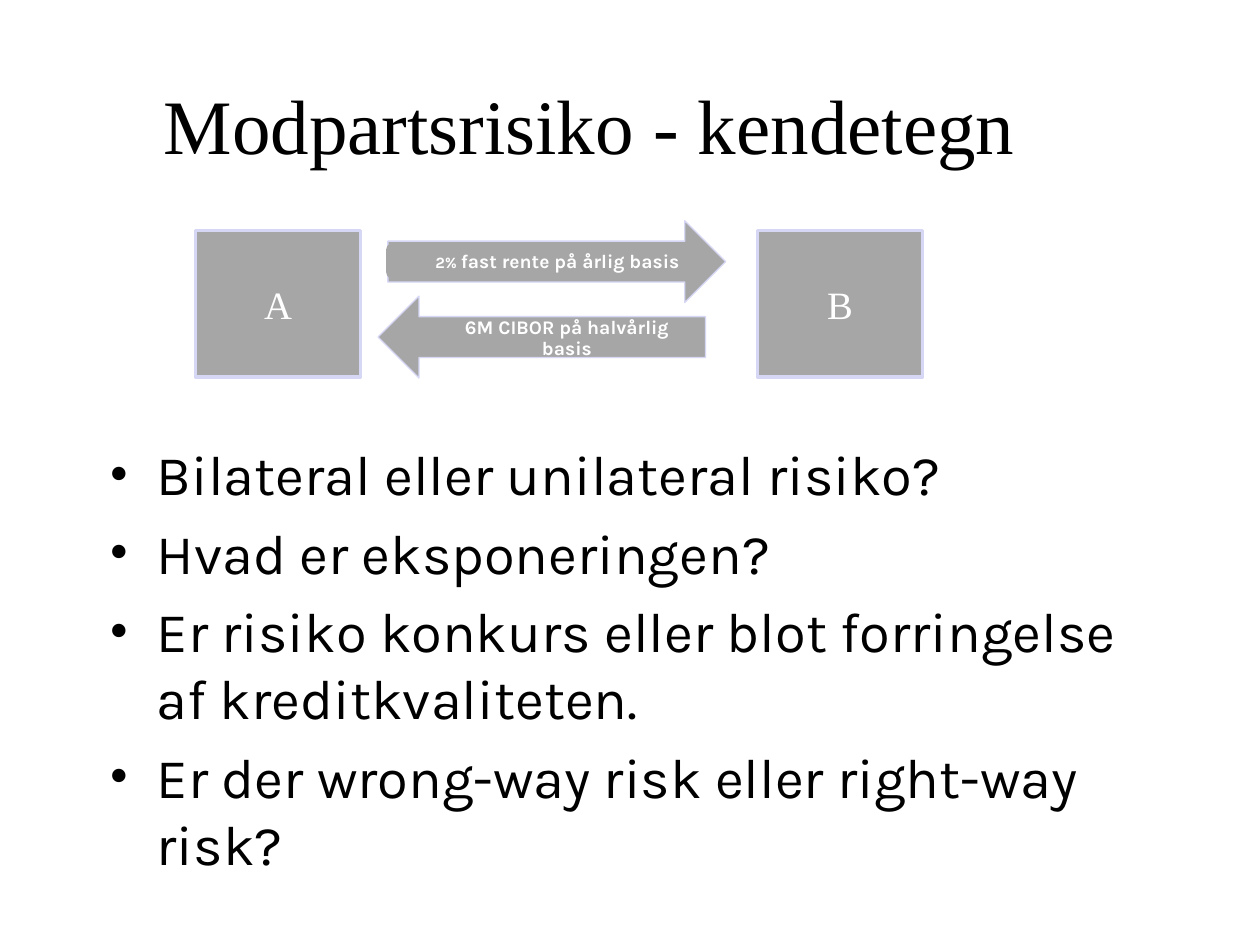
"""Build a slide on counterparty risk: a swap diagram above four bullet points."""
from dataclasses import dataclass

from lxml import etree
from pptx import Presentation
from pptx.dml.color import RGBColor
from pptx.enum import shapes, text
from pptx.oxml import ns
from pptx.util import Cm, Pt

BLACK = RGBColor(0x00, 0x00, 0x00)
WHITE = RGBColor(0xFF, 0xFF, 0xFF)
GREY = RGBColor(0xA6, 0xA6, 0xA6)
LAVENDER = RGBColor(0xD6, 0xD6, 0xF5)
SERIF = "Times New Roman"
SANS = "Karla"
BULLETS = [
    "Bilateral eller unilateral risiko?",
    "Hvad er eksponeringen?",
    "Er risiko konkurs eller blot forringelse af kreditkvaliteten.",
    "Er der wrong-way risk eller right-way risk?",
]


@dataclass
class Box:
    left: float
    top: float
    width: float
    height: float

    def emu(self) -> tuple:
        return Cm(self.left), Cm(self.top), Cm(self.width), Cm(self.height)


@dataclass
class Party:
    name: str
    left: float


@dataclass
class Payment:
    runs: list[tuple[str, float]]
    arrow: Box
    bar: Box
    label: Box
    inset: float
    rotation: int = 0


PARTIES = [Party("A", 3.94), Party("B", 15.27)]
PAYMENTS = [
    Payment([("2% ", 9), ("fast rente på årlig basis", 11)],
            Box(7.82, 4.45, 6.81, 1.65), Box(7.82, 4.93, 6.07, 0.66),
            Box(8.64, 4.98, 5.2, 0.61), 0.1),
    Payment([("6M CIBOR på halvårlig basis", 11)],
            Box(7.62, 5.97, 6.6, 1.65), Box(8.2, 6.48, 5.94, 0.66),
            Box(8.89, 6.53, 5.08, 0.61), 0.13, 180),
]


def style_run(r, font: str, size: float, color: RGBColor, bold: bool = False) -> None:
    r.font.name = font
    r.font.size = Pt(size)
    r.font.bold = bold
    r.font.color.rgb = color


def add_filled(s, kind, box: Box, line: RGBColor, weight: float):
    sp = s.shapes.add_shape(kind, *box.emu())
    sp.shadow.inherit = False
    sp.fill.solid()
    sp.fill.fore_color.rgb = GREY
    sp.line.color.rgb = line
    sp.line.width = Pt(weight)
    return sp


def add_title(s, title: str) -> None:
    sp = s.shapes.title
    sp.left, sp.top, sp.width, sp.height = Box(1.09, 0.91, 21.59, 3.18).emu()
    tf = sp.text_frame
    tf.text = title
    tf.auto_size = text.MSO_AUTO_SIZE.NONE
    tf.vertical_anchor = text.MSO_ANCHOR.MIDDLE
    p = tf.paragraphs[0]
    p.alignment = text.PP_ALIGN.CENTER
    style_run(p.runs[0], SERIF, 44, BLACK)


def add_party(s, party: Party) -> None:
    box = Box(party.left, 4.65, 3.33, 2.95)
    sp = add_filled(s, shapes.MSO_SHAPE.RECTANGLE, box, LAVENDER, 2)
    tf = sp.text_frame
    tf.text = party.name
    tf.vertical_anchor = text.MSO_ANCHOR.MIDDLE
    p = tf.paragraphs[0]
    p.alignment = text.PP_ALIGN.CENTER
    style_run(p.runs[0], SERIF, 22.1, WHITE)


def add_payment(s, payment: Payment) -> None:
    arrow = add_filled(s, shapes.MSO_SHAPE.RIGHT_ARROW, payment.arrow, LAVENDER, 0.75)
    arrow.rotation = payment.rotation
    add_filled(s, shapes.MSO_SHAPE.ROUNDED_RECTANGLE, payment.bar, GREY, 2)
    tf = s.shapes.add_textbox(*payment.label.emu()).text_frame
    tf.word_wrap = True
    tf.vertical_anchor = text.MSO_ANCHOR.MIDDLE
    tf.margin_left = tf.margin_right = Cm(payment.inset)
    tf.margin_top = tf.margin_bottom = Cm(payment.inset)
    p = tf.paragraphs[0]
    p.alignment = text.PP_ALIGN.CENTER
    p.line_spacing = 0.9
    for words, size in payment.runs:
        r = p.add_run()
        r.text = words
        style_run(r, SANS, size, WHITE, bold=True)


def add_bullets(s, items: list[str]) -> None:
    tf = s.shapes.add_textbox(*Box(1.96, 8.74, 21.59, 11.43).emu()).text_frame
    tf.word_wrap = True
    tf.text = "\n".join(items)
    for p in tf.paragraphs:
        p.space_before = Pt(6.4)
        style_run(p.runs[0], SANS, 32, BLACK)
        props = p._p.get_or_add_pPr()
        props.set("marL", str(Cm(0.95)))
        props.set("indent", str(-Cm(0.95)))
        etree.SubElement(props, ns.qn("a:buFont")).set("typeface", SERIF)
        etree.SubElement(props, ns.qn("a:buChar")).set("char", "•")


def main() -> None:
    prs = Presentation()
    prs.slide_width, prs.slide_height = Cm(25.4), Cm(19.05)
    s = prs.slides.add_slide(prs.slide_layouts.get_by_name("Title Only"))
    add_title(s, "Modpartsrisiko - kendetegn")
    add_bullets(s, BULLETS)
    for party in PARTIES:
        add_party(s, party)
    for payment in PAYMENTS:
        add_payment(s, payment)
    prs.save("out.pptx")


if __name__ == "__main__":
    main()
